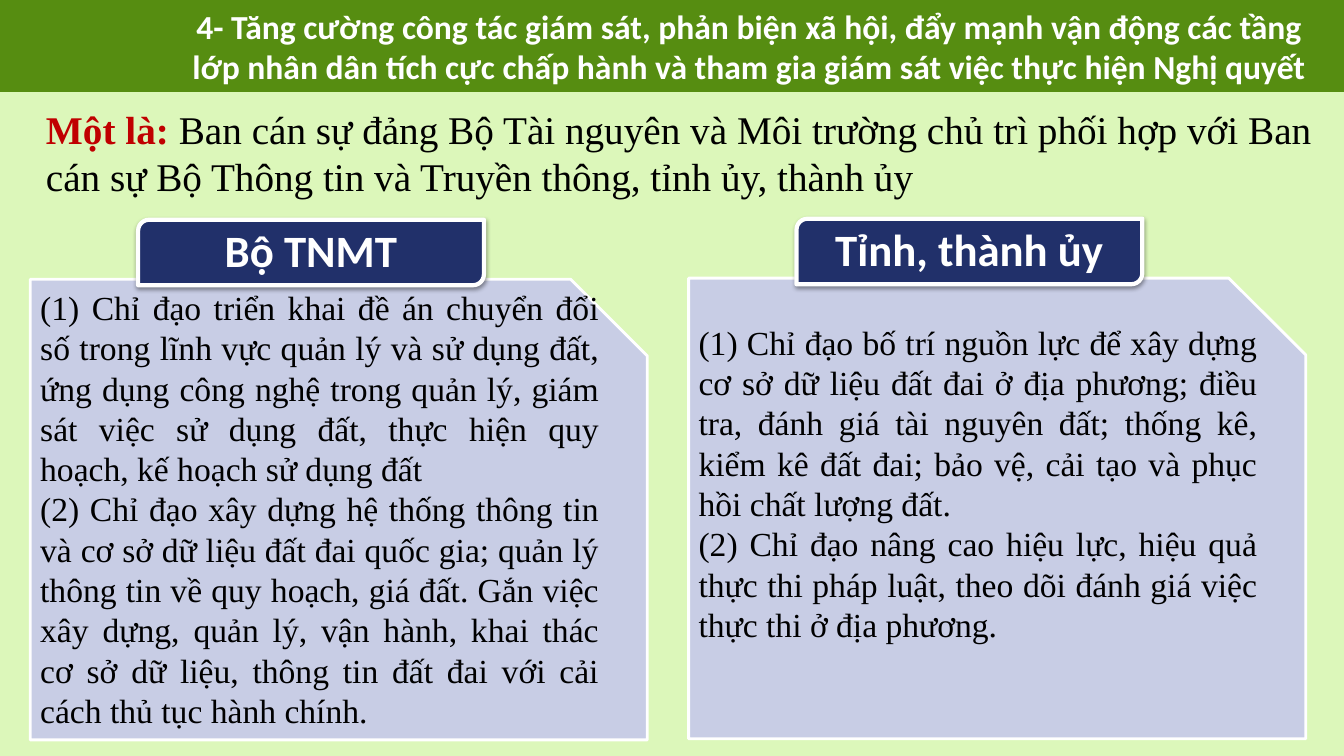
import pptx
import pptx.util
import pptx.dml.color
import pptx.enum.shapes
import pptx.enum.text
import pptx.oxml
import pptx.oxml.ns
from dataclasses import dataclass

TITLE = ("4- Tăng cường công tác giám sát, phản biện xã hội, đẩy mạnh vận động các tầng "
         "lớp nhân dân tích cực chấp hành và tham gia giám sát việc thực hiện Nghị quyết")
LEAD = ("Một là: ",
        "Ban cán sự đảng Bộ Tài nguyên và Môi trường chủ trì phối hợp với Ban cán sự "
        "Bộ Thông tin và Truyền thông, tỉnh ủy, thành ủy")
PANELS = [
    {"heading": "Bộ TNMT", "top": 2.77, "anchor": "MIDDLE", "bottom_inset": 0.45, "items": [
        "(1) Chỉ đạo triển khai đề án chuyển đổi số trong lĩnh vực quản lý và sử dụng đất, "
        "ứng dụng công nghệ trong quản lý, giám sát việc sử dụng đất, thực hiện quy hoạch, "
        "kế hoạch sử dụng đất",
        "(2) Chỉ đạo xây dựng hệ thống thông tin và cơ sở dữ liệu đất đai quốc gia; quản lý "
        "thông tin về quy hoạch, giá đất. Gắn việc xây dựng, quản lý, vận hành, khai thác "
        "cơ sở dữ liệu, thông tin đất đai với cải cách thủ tục hành chính."]},
    {"heading": "Tỉnh, thành ủy", "top": 2.76, "anchor": "TOP", "bottom_inset": 0.05, "items": [
        "(1) Chỉ đạo bố trí nguồn lực để xây dựng cơ sở dữ liệu đất đai ở địa phương; điều "
        "tra, đánh giá tài nguyên đất; thống kê, kiểm kê đất đai; bảo vệ, cải tạo và phục "
        "hồi chất lượng đất.",
        "(2) Chỉ đạo nâng cao hiệu lực, hiệu quả thực thi pháp luật, theo dõi đánh giá việc "
        "thực thi ở địa phương."]},
]


@dataclass(frozen=True)
class Theme:
    green: str = "568D11"
    pale: str = "DCF7BA"
    panel: str = "C8CDE5"
    navy: str = "21306A"
    red: str = "C00000"
    white: str = "FFFFFF"
    black: str = "000000"
    sans: str = "Calibri"
    serif: str = "Times New Roman"
    body_size: int = 24
    lead_size: int = 28
    heading_size: int = 32


THEME = Theme()
WIDTH, HEIGHT = 13.33, 7.5
BAND_HEIGHT = 0.92
MARGIN = 0.3
COLUMN_STEP = 6.53
PANEL_WIDTH, PANEL_HEIGHT = 6.12, 4.57
HEADING_WIDTH, HEADING_HEIGHT = 3.43, 0.65
HEADING_DX, HEADING_DY = 1.07, -0.59
HEADING_INSET = 0.26

SHAPES = pptx.enum.shapes.MSO_SHAPE
ANCHORS = pptx.enum.text.MSO_ANCHOR
ALIGN = pptx.enum.text.PP_ALIGN
Inches, Pt = pptx.util.Inches, pptx.util.Pt


def color(value):
    return pptx.dml.color.RGBColor.from_string(value)


def add_box(slide, kind, left, top, width, height, fill=None, line=None, line_width=0):
    shape = slide.shapes.add_shape(kind, *map(Inches, (left, top, width, height)))
    shape.shadow.inherit = False
    if fill:
        shape.fill.solid()
        shape.fill.fore_color.rgb = color(fill)
    else:
        shape.fill.background()
    if line:
        shape.line.color.rgb = color(line)
        shape.line.width = Pt(line_width)
    else:
        shape.line.fill.background()
    return shape


def format_paragraph(paragraph, name, size, ink, align, bold=False):
    paragraph.alignment = align
    paragraph.font.name = name
    paragraph.font.size = Pt(size)
    paragraph.font.bold = bold
    paragraph.font.color.rgb = color(ink)


def add_drop_shadow(shape):
    effects = shape._element.spPr.find(pptx.oxml.ns.qn("a:effectLst"))
    effects.append(pptx.oxml.parse_xml(
        f'<a:outerShdw {pptx.oxml.ns.nsdecls("a")} blurRad="{Pt(3.1)}" dist="{Pt(1.6)}" '
        'dir="5400000" rotWithShape="0"><a:srgbClr val="000000">'
        '<a:alpha val="38000"/></a:srgbClr></a:outerShdw>'))


def add_title(slide):
    title = slide.shapes.title
    title.left, title.top, title.width, title.height = map(Inches, (1.64, 0.01, 11.53, 0.91))
    frame = title.text_frame
    frame.text = TITLE
    frame.word_wrap = True
    frame.auto_size = pptx.enum.text.MSO_AUTO_SIZE.NONE
    frame.vertical_anchor = ANCHORS.TOP
    frame.margin_left = Inches(0.15)
    paragraph = frame.paragraphs[0]
    format_paragraph(paragraph, THEME.sans, THEME.body_size, THEME.white, ALIGN.CENTER, True)
    paragraph.line_spacing = 1.0
    paragraph.space_before = Pt(0)


def add_lead(slide):
    box = add_box(slide, SHAPES.ROUNDED_RECTANGLE, MARGIN, BAND_HEIGHT, 12.87, 1.19)
    box.text_frame.vertical_anchor = ANCHORS.MIDDLE
    paragraph = box.text_frame.paragraphs[0]
    format_paragraph(paragraph, THEME.serif, THEME.lead_size, THEME.black, ALIGN.JUSTIFY)
    for text, ink, bold in zip(LEAD, (THEME.red, THEME.black), (True, False)):
        run = paragraph.add_run()
        run.text = text
        run.font.name = THEME.serif
        run.font.size = Pt(THEME.lead_size)
        run.font.bold = bold
        run.font.color.rgb = color(ink)


def add_panel(slide, column, panel):
    left, top = MARGIN + column * COLUMN_STEP, panel["top"]
    body = add_box(slide, SHAPES.SNIP_1_RECTANGLE, left, top, PANEL_WIDTH, PANEL_HEIGHT,
                   THEME.panel, THEME.white, 2)
    frame = body.text_frame
    frame.text = "\n".join(panel["items"])
    frame.vertical_anchor = ANCHORS[panel["anchor"]]
    frame.margin_bottom = Inches(panel["bottom_inset"])
    for paragraph in frame.paragraphs:
        format_paragraph(paragraph, THEME.serif, THEME.body_size, THEME.black, ALIGN.JUSTIFY)

    heading = add_box(slide, SHAPES.ROUND_2_DIAG_RECTANGLE, left + HEADING_DX, top + HEADING_DY,
                      HEADING_WIDTH, HEADING_HEIGHT, THEME.navy, THEME.white, 3)
    add_drop_shadow(heading)
    frame = heading.text_frame
    frame.text = panel["heading"]
    frame.vertical_anchor = ANCHORS.MIDDLE
    frame.margin_left = frame.margin_right = Inches(HEADING_INSET)
    frame.margin_top = frame.margin_bottom = Inches(HEADING_INSET)
    paragraph = frame.paragraphs[0]
    format_paragraph(paragraph, THEME.sans, THEME.heading_size, THEME.white, ALIGN.CENTER, True)
    paragraph.line_spacing = 0.9


def main():
    presentation = pptx.Presentation()
    presentation.slide_width, presentation.slide_height = Inches(WIDTH), Inches(HEIGHT)
    slide = presentation.slides.add_slide(presentation.slide_layouts.get_by_name("Title Only"))
    slide.background.fill.solid()
    slide.background.fill.fore_color.rgb = color(THEME.green)
    add_title(slide)
    add_box(slide, SHAPES.RECTANGLE, 0, BAND_HEIGHT, WIDTH, HEIGHT - BAND_HEIGHT,
            THEME.pale, THEME.pale, 1.25)
    add_lead(slide)
    for column, panel in enumerate(PANELS):
        add_panel(slide, column, panel)
    presentation.save("out.pptx")


if __name__ == "__main__":
    main()
